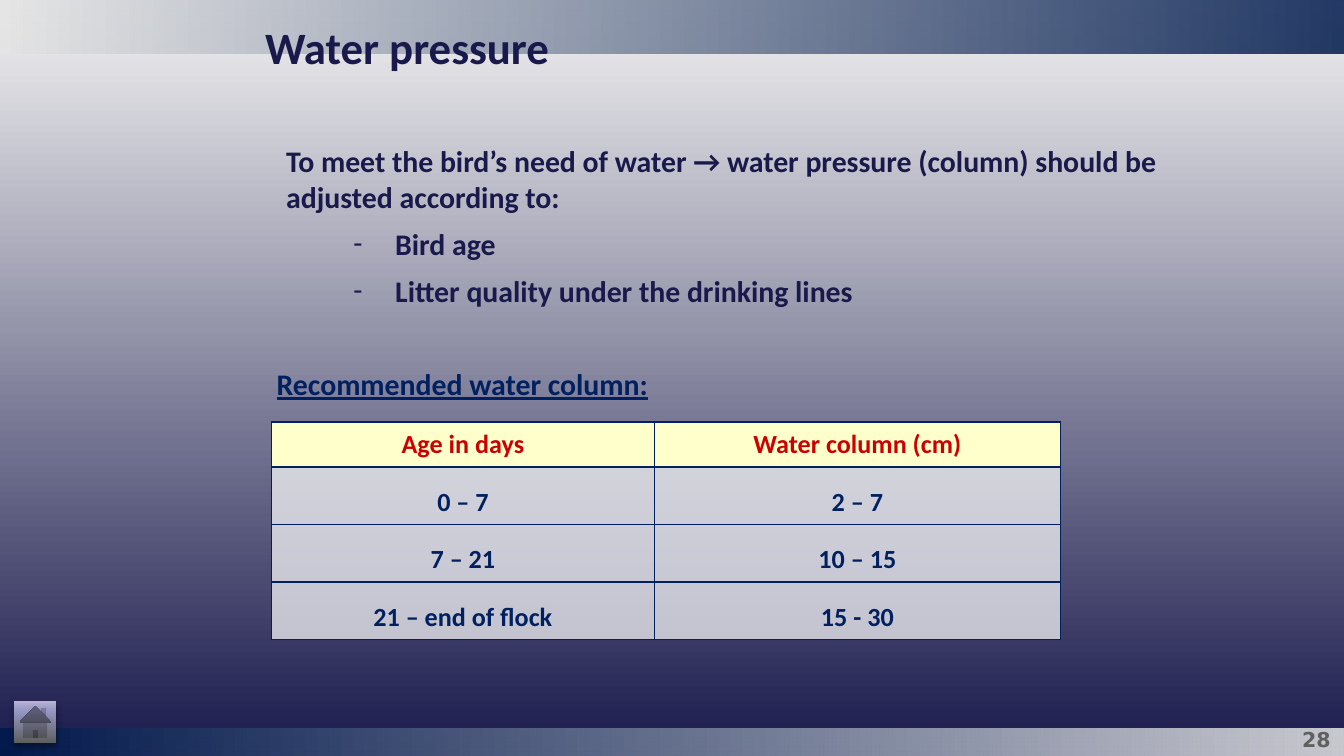
import pptx
import pptx.dml.color
import pptx.enum.shapes
import pptx.enum.text
import pptx.oxml
import pptx.oxml.ns
import pptx.util
from pptx.util import Cm

qn = pptx.oxml.ns.qn
ALIGN = pptx.enum.text.PP_ALIGN
SHAPE = pptx.enum.shapes.MSO_SHAPE
NAMESPACE = pptx.oxml.ns.nsdecls("a")

INK, NAVY, RED, GREY = "19194C", "002060", "CC0000", "606060"
BAR_STOPS = [(0, "E4E4E4", 86), (100, "001A4D", 85)]
BOLD = {"name": "Calibri", "bold": True}


def color(value):
    return pptx.dml.color.RGBColor.from_string(value)


def element(xml):
    """Parse XML whose root tag holds {ns} for the namespace declaration."""
    return pptx.oxml.parse_xml(xml.replace("{ns}", NAMESPACE))


def style_font(font, size, hue, **extra):
    values = {**BOLD, "size": pptx.util.Pt(size), **extra}
    for name, value in values.items():
        setattr(font, name, value)
    font.color.rgb = color(hue)


def set_gradient(fill, properties, stops, angle):
    """Turn a fill into a gradient of (position, colour, opacity) percentages."""
    fill.solid()
    stop_xml = "".join(
        f'<a:gs pos="{position * 1000}"><a:srgbClr val="{hue}">'
        f'<a:alpha val="{opacity * 1000}"/></a:srgbClr></a:gs>'
        for position, hue, opacity in stops)
    gradient = element(
        f'<a:gradFill {{ns}} rotWithShape="1"><a:gsLst>{stop_xml}</a:gsLst>'
        f'<a:lin ang="{angle * 60000}" scaled="0"/></a:gradFill>')
    properties.replace(properties.find(qn("a:solidFill")), gradient)


def add_gradient_shape(slide, kind, box, stops, angle):
    shape = slide.shapes.add_shape(kind, *map(Cm, box))
    shape.shadow.inherit = False
    shape.line.fill.background()
    set_gradient(shape.fill, shape.element.spPr, stops, angle)
    return shape


def add_text_frame(slide, box, wrap=True):
    frame = slide.shapes.add_textbox(*map(Cm, box)).text_frame
    frame.word_wrap = wrap
    return frame


def add_line(slide, box, text, size, hue, align=ALIGN.LEFT, wrap=True, **extra):
    frame = add_text_frame(slide, box, wrap)
    paragraph = frame.paragraphs[0]
    paragraph.text = text
    paragraph.alignment = align
    style_font(paragraph.runs[0].font, size, hue, **extra)
    return frame


def add_background(slide):
    fill = slide.background.fill
    fill.solid()
    properties = slide.element.find(".//" + qn("p:bgPr"))
    set_gradient(fill, properties, [(0, "F2F2F2", 100), (100, INK, 85)], 90)


def add_home_button(slide, box):
    stops = [(0, "5E5E5E", 100), (80, "999AC7", 100), (100, "BBB4D4", 100)]
    button = add_gradient_shape(slide, SHAPE.ACTION_BUTTON_HOME, box, stops, 270)
    button.element.spPr.find(qn("a:effectLst")).append(element(
        '<a:outerShdw {ns} blurRad="39370" dist="22860" dir="5400000" rotWithShape="0">'
        '<a:srgbClr val="000000"><a:alpha val="35000"/></a:srgbClr></a:outerShdw>'))


def add_frame_bars(slide, width, height):
    """Place the header and footer bars, the home button and the page number."""
    add_gradient_shape(slide, SHAPE.RECTANGLE, (0, height - 0.52, width, 0.52), BAR_STOPS, 180)
    add_gradient_shape(slide, SHAPE.RECTANGLE, (0, -0.02, width, 1.04), BAR_STOPS, 0)
    add_line(slide, (width - 1.55, height - 0.67, 1.55, 0.74), "28", 11, GREY,
             ALIGN.RIGHT, wrap=False, name="DejaVu Sans")
    add_home_button(slide, (0.27, height - 1.04, 0.8, 0.8))


def add_criteria(slide, box, lead, criteria):
    frame = add_text_frame(slide, box)
    for index, text in enumerate([lead, *criteria]):
        paragraph = frame.paragraphs[0] if index == 0 else frame.add_paragraph()
        paragraph.text = text
        paragraph.space_after = pptx.util.Pt(6)
        if index:
            paragraph.level = 1
            properties = paragraph._p.get_or_add_pPr()
            properties.set("marL", str(Cm(2.06)))
            properties.set("indent", str(Cm(-0.79)))
            properties.append(element(f'<a:buClr {{ns}}><a:srgbClr val="{INK}"/></a:buClr>'))
            properties.append(element('<a:buFont {ns} typeface="Calibri"/>'))
            properties.append(element('<a:buChar {ns} char="-"/>'))
        style_font(paragraph.runs[0].font, 16, INK)


def fill_cell(cell, text, hue, background, opacity, line_spacing):
    properties = cell._tc.get_or_add_tcPr()
    for side in "LRTB":
        properties.append(element(
            f'<a:ln{side} {{ns}} w="12700"><a:solidFill><a:srgbClr val="{NAVY}"/>'
            f'</a:solidFill></a:ln{side}>'))
    cell.fill.solid()
    cell.fill.fore_color.rgb = color(background)
    properties.find(qn("a:solidFill"))[0].append(
        element(f'<a:alpha {{ns}} val="{opacity * 1000}"/>'))
    paragraph = cell.text_frame.paragraphs[0]
    paragraph.text = text
    paragraph.alignment = ALIGN.CENTER
    paragraph.line_spacing = line_spacing
    style_font(paragraph.runs[0].font, 14, hue)


def add_water_table(slide, box, rows):
    left, top, width, height = box
    header_height, first_column = 0.85, 7.24
    table = slide.shapes.add_table(len(rows), 2, *map(Cm, box)).table
    table.first_row = table.horz_banding = False
    for column, column_width in zip(table.columns, (first_column, width - first_column)):
        column.width = Cm(column_width)
    for index, texts in enumerate(rows):
        if index == 0:
            row_height, look = header_height, (RED, "FFFFCC", 100, 1.0)
        else:
            row_height = (height - header_height) / (len(rows) - 1)
            look = (NAVY, "FFFFFF", 70, 1.4)
        table.rows[index].height = Cm(row_height)
        for cell, text in zip(table.rows[index].cells, texts):
            fill_cell(cell, text, *look)


def main():
    width, height = 25.4, 14.29
    deck = pptx.Presentation()
    deck.slide_width, deck.slide_height = Cm(width), Cm(height)
    slide = deck.slides.add_slide(deck.slide_layouts[6])

    add_background(slide)
    add_frame_bars(slide, width, height)
    title = add_line(slide, (4.57, 0.25, 18.36, 1.27), "Water pressure", 24, INK)
    title.margin_left = Cm(0.44)
    add_criteria(
        slide, (5.16, 2.57, 18.06, 4.32),
        "To meet the bird’s need of water → water pressure (column) should be "
        "adjusted according to:",
        ["Bird age", "Litter quality under the drinking lines"])
    add_line(slide, (4.98, 6.78, 8, 0.94), "Recommended water column:", 16, NAVY,
             underline=True)
    add_water_table(slide, (5.13, 7.98, 14.91, 4.09), [
        ("Age in days", "Water column (cm)"),
        ("0 – 7", "2 – 7"),
        ("7 – 21", "10 – 15"),
        ("21 – end of flock", "15 - 30")])
    deck.save("out.pptx")


if __name__ == "__main__":
    main()
